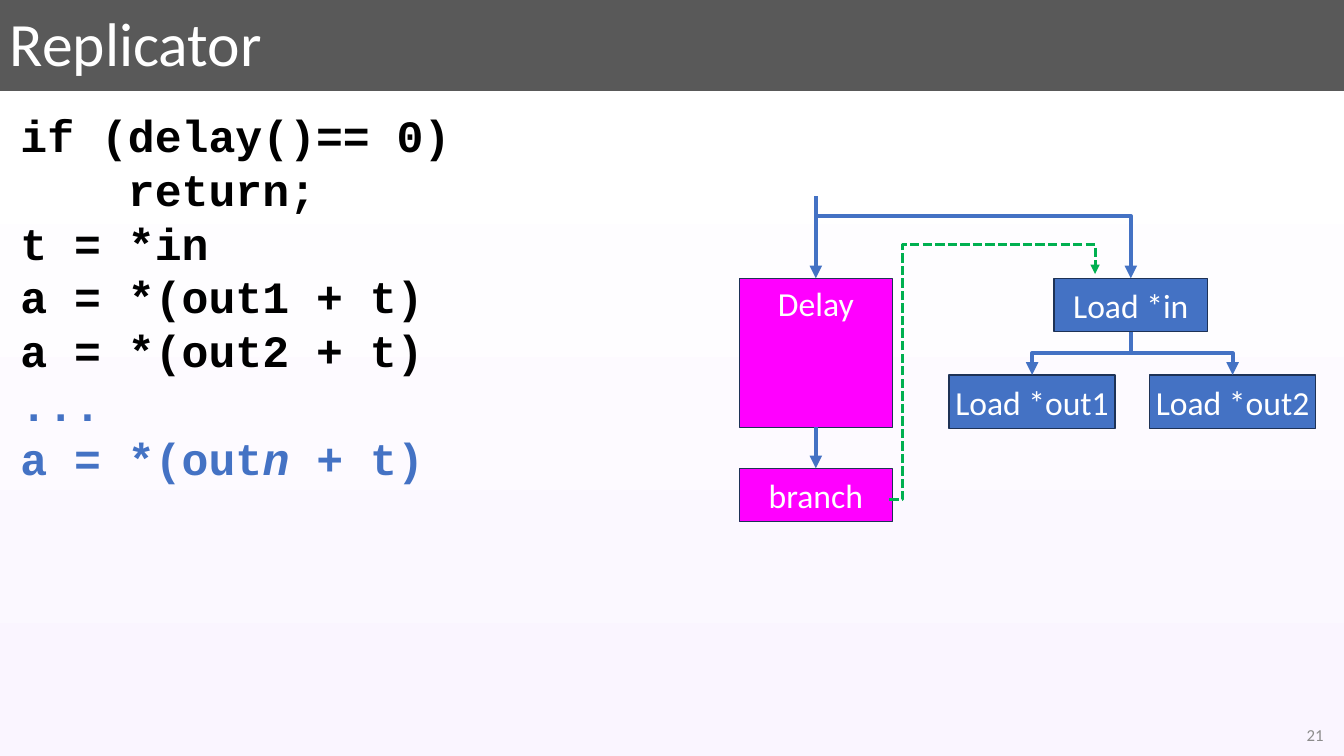
import pptx
import pptx.util
import pptx.dml.color
import pptx.enum.dml
import pptx.enum.shapes
import pptx.enum.text
import pptx.oxml
import pptx.oxml.ns

PX = 9525
BLUE, PINK, GREEN, WHITE = "4472C4", "FF00FF", "00B050", "FFFFFF"
ALIGN = pptx.enum.text.PP_ALIGN
ANCHOR = pptx.enum.text.MSO_ANCHOR
KIND = pptx.enum.shapes.MSO_CONNECTOR
RECT = pptx.enum.shapes.MSO_SHAPE.RECTANGLE
NS = pptx.oxml.ns.nsdecls("a")


def px(*nums):
    return [round(n * PX) for n in nums]


def rgb(code):
    return pptx.dml.color.RGBColor.from_string(code)


def write(para, text, size=24, color=WHITE, face="Calibri", bold=False,
          slant=False, align=None):
    """Add one run to a paragraph."""
    run = para.add_run()
    run.text = text
    font = run.font
    font.size, font.name = pptx.util.Pt(size), face
    font.bold, font.italic = bold, slant
    font.color.rgb = rgb(color)
    if align is not None:
        para.alignment = align


def arrow(item, color=BLUE, width=3):
    """Give a line its colour, width and end arrowhead, without shadow."""
    item.line.color.rgb = rgb(color)
    item.line.width = pptx.util.Pt(width)
    props = item.element.spPr
    line = props.find(pptx.oxml.ns.qn("a:ln"))
    line.append(pptx.oxml.parse_xml(f'<a:tailEnd {NS} type="triangle"/>'))
    props.append(pptx.oxml.parse_xml(f"<a:effectLst {NS}/>"))


deck = pptx.Presentation()
deck.slide_width, deck.slide_height = px(1280, 720)
slide = deck.slides.add_slide(deck.slide_layouts[6])
shapes = slide.shapes

# Background: dark title band, then white fading to lilac
back = slide.background.fill
back.gradient()
back.gradient_angle = 270
stops = slide.element.find(".//" + pptx.oxml.ns.qn("a:gsLst"))
for stop in list(stops):
    stops.remove(stop)
for place, color in [(0, "595959"), (12, "595959"), (12, WHITE), (100, "FAF5FF")]:
    stops.append(pptx.oxml.parse_xml(
        f'<a:gs {NS} pos="{place * 1000}"><a:srgbClr val="{color}"/></a:gs>'))

# Title and page number
for text, frame, size, color, align in [
    ("Replicator", (0, 0, 1270, 88), 44, WHITE, ALIGN.LEFT),
    ("21", (982, 682, 288, 38), 12, "8C8C8C", ALIGN.RIGHT),
]:
    body = shapes.add_textbox(*px(*frame)).text_frame
    body.word_wrap = True
    body.vertical_anchor = ANCHOR.MIDDLE
    body.paragraphs[0].line_spacing = 0.9
    write(body.paragraphs[0], text, size=size, color=color, align=align)

# Code
code = [
    ("000000", ["if (delay()== 0)"]),
    ("000000", ["    return;"]),
    ("000000", ["t = *in"]),
    ("000000", ["a = *(out1 + t)"]),
    ("000000", ["a = *(out2 + t)"]),
    (BLUE, ["..."]),
    (BLUE, ["a = *(out", "n", " + t)"]),
]
body = shapes.add_textbox(*px(10, 98, 572, 372)).text_frame
body.word_wrap = True
body.auto_size = pptx.enum.text.MSO_AUTO_SIZE.SHAPE_TO_FIT_TEXT
for row, (color, parts) in enumerate(code):
    para = body.add_paragraph() if row else body.paragraphs[0]
    for part in parts:
        write(para, part, size=32, color=color, face="Courier New",
              bold=True, slant=part == "n")

# Boxes
nodes = {}
for text, frame, color, anchor, inset in [
    ("Load *in", (1004, 265, 146, 51), BLUE, ANCHOR.MIDDLE, 10),
    ("Delay", (704, 265, 146, 142), PINK, ANCHOR.TOP, 10),
    ("branch", (704, 446, 146, 51), PINK, ANCHOR.MIDDLE, 10),
    ("Load *out1", (904, 357, 158, 51), BLUE, ANCHOR.MIDDLE, 4),
    ("Load *out2", (1095, 357, 158, 51), BLUE, ANCHOR.MIDDLE, 4),
]:
    node = nodes[text] = shapes.add_shape(RECT, *px(*frame))
    node.shadow.inherit = False
    node.fill.solid()
    node.fill.fore_color.rgb = rgb(color)
    node.line.color.rgb = rgb("1E3256")
    node.line.width = pptx.util.Pt(1)
    body = node.text_frame
    body.word_wrap = True
    body.vertical_anchor = anchor
    body.margin_left, body.margin_right = px(inset, inset)
    write(body.paragraphs[0], text, align=ALIGN.CENTER)

# Straight arrows
entry = shapes.add_connector(KIND.STRAIGHT, *px(777, 187, 777, 265))
entry.end_connect(nodes["Delay"], 0)
arrow(entry)
step = shapes.add_connector(KIND.STRAIGHT, *px(777, 407, 777, 446))
step.begin_connect(nodes["Delay"], 2)
step.end_connect(nodes["branch"], 0)
arrow(step)

# Elbows from Load *in: drawn sideways about their middle, then turned upright
top, low, start = 316, 357, 1077
for end, turn in [(983, 90), (1174, 270)]:
    mid_x, mid_y = (start + end) / 2, (top + low) / 2
    half, rise = abs(end - start) / 2, (low - top) / 2
    side = rise if turn == 270 else -rise
    elbow = shapes.add_connector(KIND.ELBOW, *px(
        mid_x + side, mid_y - half, mid_x - side, mid_y + half))
    elbow.element.spPr.find(pptx.oxml.ns.qn("a:xfrm")).set("rot", str(turn * 60000))
    arrow(elbow)

# Routed arrows into Load *in
for points, color, width, dash in [
    ([(777, 206), (1077, 206), (1077, 265)], BLUE, 3, None),
    ([(847, 476), (860, 476), (860, 233), (1043, 233), (1043, 261)], GREEN, 2.25,
     pptx.enum.dml.MSO_LINE.SQUARE_DOT),
]:
    pen = shapes.build_freeform(*points[0], scale=PX)
    pen.add_line_segments(points[1:], close=False)
    route = pen.convert_to_shape()
    route.fill.background()
    if dash:
        route.line.dash_style = dash
    arrow(route, color=color, width=width)

deck.save("out.pptx")
